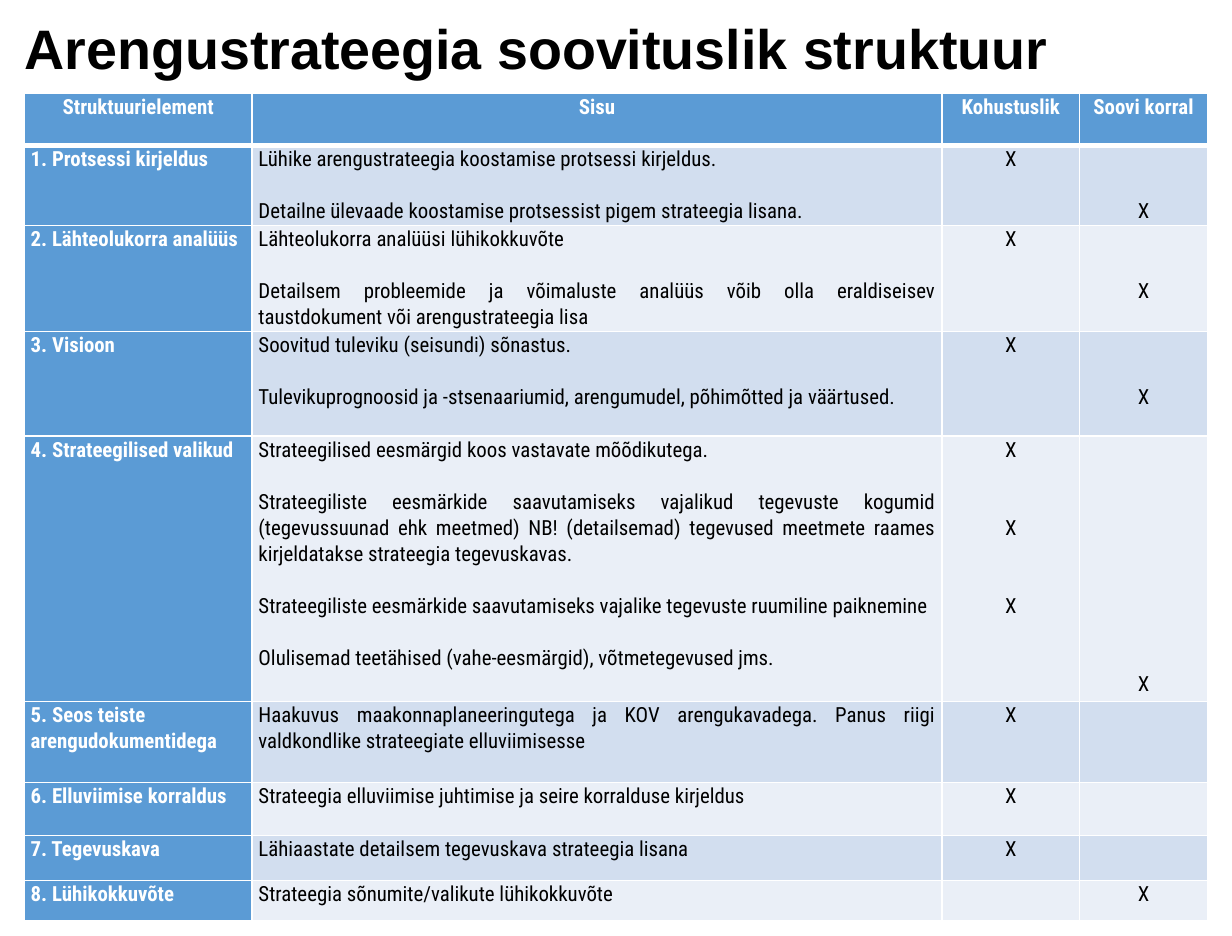
from dataclasses import dataclass

from lxml import etree
from pptx import Presentation
from pptx import util as u
from pptx.dml.color import RGBColor
from pptx.enum import text
from pptx.oxml import ns

AL = text.PP_ALIGN


@dataclass(frozen=True)
class Theme:
    head: str = "5B9BD5"
    bands: tuple = ("D2DEEF", "EAEFF7")
    light: str = "FFFFFF"
    dark: str = "000000"
    title_font: str = "Arial"
    body_font: str = "Roboto Condensed"
    title_size: int = 32
    body_size: int = 12
    body_line: int = 15
    title_spacing: float = 0.88
    body_spacing: float = 1.07
    rule: int = 1
    head_rule: int = 3


GRID_COLS, GRID_ROWS = 984, 748
LEFT = 19.5
COL_WIDTHS = (182, 551, 110, 102)
HEADERS = ("Struktuurielement", "Sisu", "Kohustuslik", "Soovi korral")
HEADER_HEIGHT = 42

ROWS = (
    (63, "1. Protsessi kirjeldus",
     ("Lühike arengustrateegia koostamise protsessi kirjeldus.",
      "Detailne ülevaade koostamise protsessist pigem strateegia lisana."),
     (0,), (2,)),
    (83.5, "2. Lähteolukorra analüüs",
     ("Lähteolukorra analüüsi lühikokkuvõte",
      "Detailsem probleemide ja võimaluste analüüs võib olla eraldiseisev "
      "taustdokument või arengustrateegia lisa"),
     (0,), (2,)),
    (83.5, "3. Visioon",
     ("Soovitud tuleviku (seisundi) sõnastus.",
      "Tulevikuprognoosid ja -stsenaariumid, arengumudel, põhimõtted ja väärtused."),
     (0,), (2,)),
    (212, "4. Strateegilised valikud",
     ("Strateegilised eesmärgid koos vastavate mõõdikutega.",
      "Strateegiliste eesmärkide saavutamiseks vajalikud tegevuste kogumid "
      "(tegevussuunad ehk meetmed) NB! (detailsemad) tegevused meetmete raames "
      "kirjeldatakse strateegia tegevuskavas.",
      "Strateegiliste eesmärkide saavutamiseks vajalike tegevuste ruumiline paiknemine",
      "Olulisemad teetähised (vahe-eesmärgid), võtmetegevused jms."),
     (0, 3, 6), (9,)),
    (65, "5. Seos teiste arengudokumentidega",
     ("Haakuvus maakonnaplaneeringutega ja KOV arengukavadega. Panus riigi "
      "valdkondlike strateegiate elluviimisesse",),
     (0,), ()),
    (42, "6. Elluviimise korraldus",
     ("Strateegia elluviimise juhtimise ja seire korralduse kirjeldus",), (0,), ()),
    (36, "7. Tegevuskava",
     ("Lähiaastate detailsem tegevuskava strateegia lisana",), (0,), ()),
    (32, "8. Lühikokkuvõte",
     ("Strateegia sõnumite/valikute lühikokkuvõte",), (), (0,)),
)


def write(tf, lines, *, font, size, color, bold=False, align=AL.LEFT, spacing=1.0, gap=0):
    for i, line in enumerate(lines):
        p = tf.paragraphs[0] if i == 0 else tf.add_paragraph()
        p.alignment = align
        p.line_spacing = spacing
        p.space_before = u.Pt(gap if i else 0)
        r = p.add_run()
        r.text = line
        r.font.name = font
        r.font.size = u.Pt(size)
        r.font.bold = bold
        r.font.color.rgb = RGBColor.from_string(color)


class Deck:
    def __init__(self, prs, theme):
        self.prs, self.theme = prs, theme
        self.s = prs.slides.add_slide(prs.slide_layouts[6])

    def x(self, cols):
        return round(self.prs.slide_width * cols / GRID_COLS)

    def y(self, rows):
        return round(self.prs.slide_height * rows / GRID_ROWS)

    def title(self, line, col, row, cols, rows):
        t = self.theme
        sp = self.s.shapes.add_textbox(self.x(col), self.y(row), self.x(cols), self.y(rows))
        tf = sp.text_frame
        tf.word_wrap = True
        tf.margin_left = tf.margin_right = tf.margin_bottom = 0
        tf.margin_top = self.y(6)
        write(tf, [line], font=t.title_font, size=t.title_size, color=t.dark,
              bold=True, spacing=t.title_spacing)

    def table(self, col, row, widths, heights):
        frame = self.s.shapes.add_table(len(heights), len(widths), self.x(col), self.y(row),
                                        self.x(sum(widths)), self.y(sum(heights)))
        tbl = frame.table
        for c, width in zip(tbl.columns, widths):
            c.width = self.x(width)
        for r, height in zip(tbl.rows, heights):
            r.height = self.y(height)
        return tbl

    def cell(self, cell, lines, fill, *, top=1, bottom=1, skip=0, **fmt):
        t = self.theme
        tcPr = cell._tc.get_or_add_tcPr()
        for side, width in (("L", t.rule), ("R", t.rule), ("T", top), ("B", bottom)):
            ln = etree.SubElement(tcPr, ns.qn(f"a:ln{side}"), w=str(u.Pt(width)))
            solid = etree.SubElement(ln, ns.qn("a:solidFill"))
            etree.SubElement(solid, ns.qn("a:srgbClr"), val=t.light)
        cell.fill.solid()
        cell.fill.fore_color.rgb = RGBColor.from_string(fill)
        cell.margin_left = cell.margin_right = self.x(5)
        cell.margin_top, cell.margin_bottom = u.Pt(skip * t.body_line), 0
        write(cell.text_frame, lines, font=t.body_font, size=t.body_size,
              spacing=t.body_spacing, **fmt)

    def marks(self, cell, at, fill, **fmt):
        step = at[1] - at[0] - 1 if len(at) > 1 else 0
        self.cell(cell, ["X"] * len(at), fill, skip=at[0] if at else 0, color=self.theme.dark,
                  align=AL.CENTER, gap=step * self.theme.body_line, **fmt)


def main():
    prs = Presentation()
    prs.slide_width, prs.slide_height = u.Cm(25), u.Cm(19)
    t = Theme()
    deck = Deck(prs, t)
    deck.title("Arengustrateegia soovituslik struktuur", LEFT, 12, 945, 47)
    tbl = deck.table(LEFT, 74.5, COL_WIDTHS, (HEADER_HEIGHT, *(row[0] for row in ROWS)))

    for j, name in enumerate(HEADERS):
        deck.cell(tbl.cell(0, j), [name], t.head, bottom=t.head_rule,
                  color=t.light, bold=True, align=AL.CENTER)
    for i, (_, element, contents, required, optional) in enumerate(ROWS, 1):
        band = t.bands[(i - 1) % 2]
        top = t.head_rule if i == 1 else t.rule
        deck.cell(tbl.cell(i, 0), [element], t.head, top=top, color=t.light, bold=True)
        deck.cell(tbl.cell(i, 1), contents, band, top=top, color=t.dark,
                  align=AL.JUSTIFY, gap=t.body_line)
        deck.marks(tbl.cell(i, 2), required, band, top=top)
        deck.marks(tbl.cell(i, 3), optional, band, top=top)
    prs.save("out.pptx")


if __name__ == "__main__":
    main()
